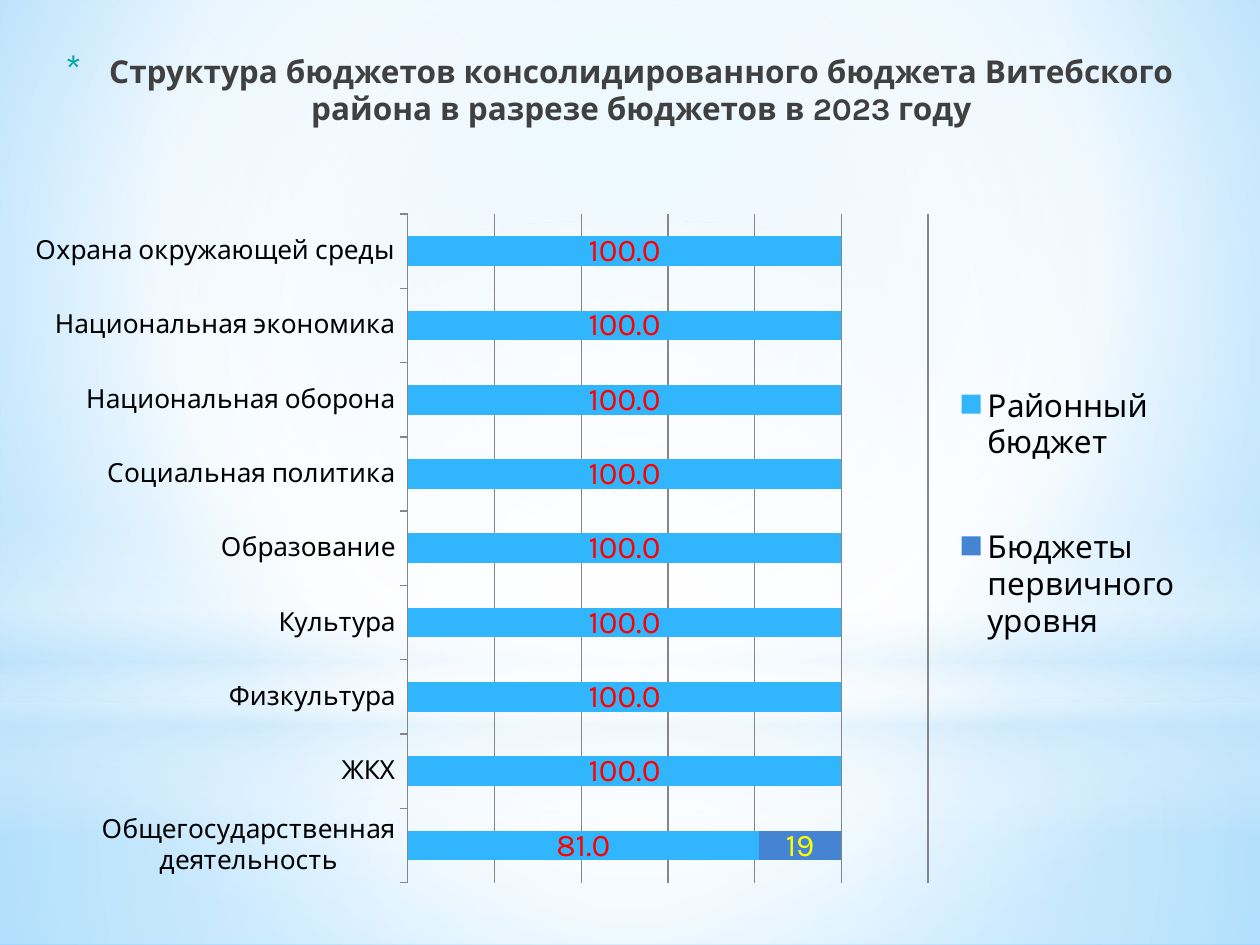
from lxml import etree
from pptx import Presentation
from pptx.chart.data import CategoryChartData
from pptx.dml.color import RGBColor
from pptx.enum.chart import XL_CHART_TYPE, XL_LEGEND_POSITION, XL_TICK_MARK
from pptx.enum.shapes import MSO_SHAPE
from pptx.enum.text import MSO_ANCHOR, PP_ALIGN
from pptx.oxml import parse_xml
from pptx.oxml.ns import nsdecls, qn
from pptx.util import Pt

RECT, OVAL = MSO_SHAPE.RECTANGLE, MSO_SHAPE.OVAL
BARS = XL_CHART_TYPE.BAR_STACKED
RIGHT = XL_LEGEND_POSITION.RIGHT
OUT = XL_TICK_MARK.OUTSIDE
CENTER, TOP = PP_ALIGN.CENTER, MSO_ANCHOR.TOP

FONT = "Karla"
BLACK = RGBColor(0x00, 0x00, 0x00)
DARK = RGBColor(0x40, 0x40, 0x40)
GREY = RGBColor(0x86, 0x86, 0x86)
SKY = RGBColor(0x31, 0xB6, 0xFD)
BLUE = RGBColor(0x45, 0x84, 0xD3)
RED = RGBColor(0xFF, 0x00, 0x00)
YELLOW = RGBColor(0xFF, 0xFF, 0x00)

TITLE = ("Структура бюджетов консолидированного бюджета Витебского "
         "района в разрезе бюджетов в 2023 году")
CATS = ["Общегосударственная деятельность", "ЖКХ", "Физкультура", "Культура",
        "Образование", "Социальная политика", "Национальная оборона",
        "Национальная экономика", "Охрана окружающей среды"]
# name, values, bar colour, label colour, label format
SERIES = [
    ("Районный бюджет", [81] + [100] * 8, SKY, RED, "0.0"),
    ("Бюджеты первичного уровня", [19] + [None] * 8, BLUE, YELLOW, "General"),
]

# gradient stops: position %, colour, opacity %
BACK = [(0, "B0E0FF", 100), (60, "FFFFFF", 100), (100, "6BC5FF", 100)]
MID = (50, 50, 50, 50)
# shape, box, stops, focus (None: runs downwards)
LAYERS = [
    (RECT, (0, 402, 720, 138),
     [(0, "FFFFFF", 91), (37, "FFFFFF", 76), (100, "C6E7FC", 79)], MID),
    (RECT, (0, 0, 720, 402),
     [(0, "FFFFFF", 89), (48, "FFFFFF", 62), (100, "C6E7FC", 79)], MID),
    (RECT, (0, 296.6, 720, 180),
     [(0, "FFFFFF", 0), (29, "FFFFFF", 30), (45, "C6E7FC", 40),
      (55, "FFFFFF", 26), (65, "C6E7FC", 60), (100, "FFFFFF", 0)], None),
    (OVAL, (0, 126, 720, 402), [(0, "FFFFFF", 100), (56, "FFFFFF", 0)], MID),
]


def pts(box):
    return [Pt(v) for v in box]


def blend(owner, stops, focus):
    """Swap the first solid fill inside owner for a gradient."""
    marks = "".join(
        f'<a:gs pos="{pos * 1000}"><a:srgbClr val="{tone}">'
        f'<a:alpha val="{alpha * 1000}"/></a:srgbClr></a:gs>'
        for pos, tone, alpha in stops)
    if focus:
        rect = " ".join(f'{k}="{v * 1000}"' for k, v in zip("ltrb", focus))
        way = f'<a:path path="circle"><a:fillToRect {rect}/></a:path>'
    else:
        way = '<a:lin ang="5400000" scaled="0"/>'
    old = owner.find(".//" + qn("a:solidFill"))
    old.getparent().replace(old, parse_xml(
        f'<a:gradFill {nsdecls("a")} rotWithShape="1">'
        f'<a:gsLst>{marks}</a:gsLst>{way}</a:gradFill>'))


def style(font, size, tone, bold=False):
    look = {"name": FONT, "size": Pt(size), "bold": bold}
    for key, val in look.items():
        setattr(font, key, val)
    font.color.rgb = tone


def place(part, x, y, w, h, inner=False):
    """Fix a chart part at fractions of the chart area."""
    old = part.find(qn("c:layout"))
    if old is not None:
        part.remove(old)
    target = '<c:layoutTarget val="inner"/>' if inner else ""
    vals = "".join(f'<c:{k} val="{v}"/>' for k, v in
                   (("xMode", "edge"), ("yMode", "edge"),
                    ("x", x), ("y", y), ("w", w), ("h", h)))
    node = parse_xml(f'<c:layout {nsdecls("c")}><c:manualLayout>{target}{vals}'
                     '</c:manualLayout></c:layout>')
    part.insert(0 if inner else 1, node)


def add_title(slide):
    title = slide.shapes.title
    title.left, title.top, title.width, title.height = pts((25.2, 25.9, 657.4, 73.4))
    frame = title.text_frame
    frame.word_wrap, frame.vertical_anchor = True, TOP
    para = frame.paragraphs[0]
    para.alignment = CENTER
    run = para.add_run()
    run.text = TITLE
    style(run.font, 18, DARK, True)
    props = para._p.get_or_add_pPr()
    props.set("marL", str(Pt(25.2)))
    props.set("indent", str(Pt(-25.2)))
    tone = etree.SubElement(props, qn("a:buClr"))
    etree.SubElement(tone, qn("a:srgbClr"), val="04A8A4")
    etree.SubElement(props, qn("a:buSzPct"), val="128000")
    etree.SubElement(props, qn("a:buFont"), typeface=FONT)
    etree.SubElement(props, qn("a:buChar"), char="*")
    title.element.getparent().append(title.element)  # above the layers


def add_bars(slide):
    data = CategoryChartData()
    data.categories = CATS
    for name, vals, *_ in SERIES:
        data.add_series(name, vals)
    chart = slide.shapes.add_chart(BARS, *pts((20.2, 110.2, 674.6, 403.9)), data).chart
    style(chart.font, 18, BLACK)
    chart.has_title = False
    plot = chart.plots[0]
    plot.gap_width, plot.overlap, plot.vary_by_categories = 150, 100, False
    for series, (_, _, tone, ink, code) in zip(plot.series, SERIES):
        series.format.fill.solid()
        series.format.fill.fore_color.rgb = tone
        labels = series.data_labels
        labels.show_value = True
        labels.number_format, labels.number_format_is_linked = code, False
        style(labels.font, 18, ink)
    cat, val = chart.category_axis, chart.value_axis
    cat.major_tick_mark = OUT
    cat.format.line.color.rgb = GREY
    style(cat.tick_labels.font, 15, BLACK)
    val.minimum_scale, val.maximum_scale, val.major_unit = 0, 120, 20
    val.has_major_gridlines, val.visible = True, False
    val.major_gridlines.format.line.color.rgb = GREY
    chart.has_legend = True
    chart.legend.position, chart.legend.include_in_layout = RIGHT, False
    style(chart.legend.font, 18, BLACK)
    place(chart.element.find(".//" + qn("c:plotArea")), 0.315, 0.03, 0.441, 0.946, True)
    place(chart.legend._element, 0.77, 0.18, 0.21, 0.55)


def main():
    deck = Presentation()
    deck.slide_width, deck.slide_height = Pt(720), Pt(540)
    slide = deck.slides.add_slide(deck.slide_layouts[5])
    slide.background.fill.solid()
    slide.background.fill.fore_color.rgb = SKY
    blend(slide.element, BACK, (20, 10, 20, 60))
    for kind, box, stops, focus in LAYERS:
        layer = slide.shapes.add_shape(kind, *pts(box))
        layer.shadow.inherit = False
        layer.fill.solid()
        layer.line.fill.background()
        blend(layer.element, stops, focus)
    add_title(slide)
    add_bars(slide)
    deck.save("out.pptx")


if __name__ == "__main__":
    main()
